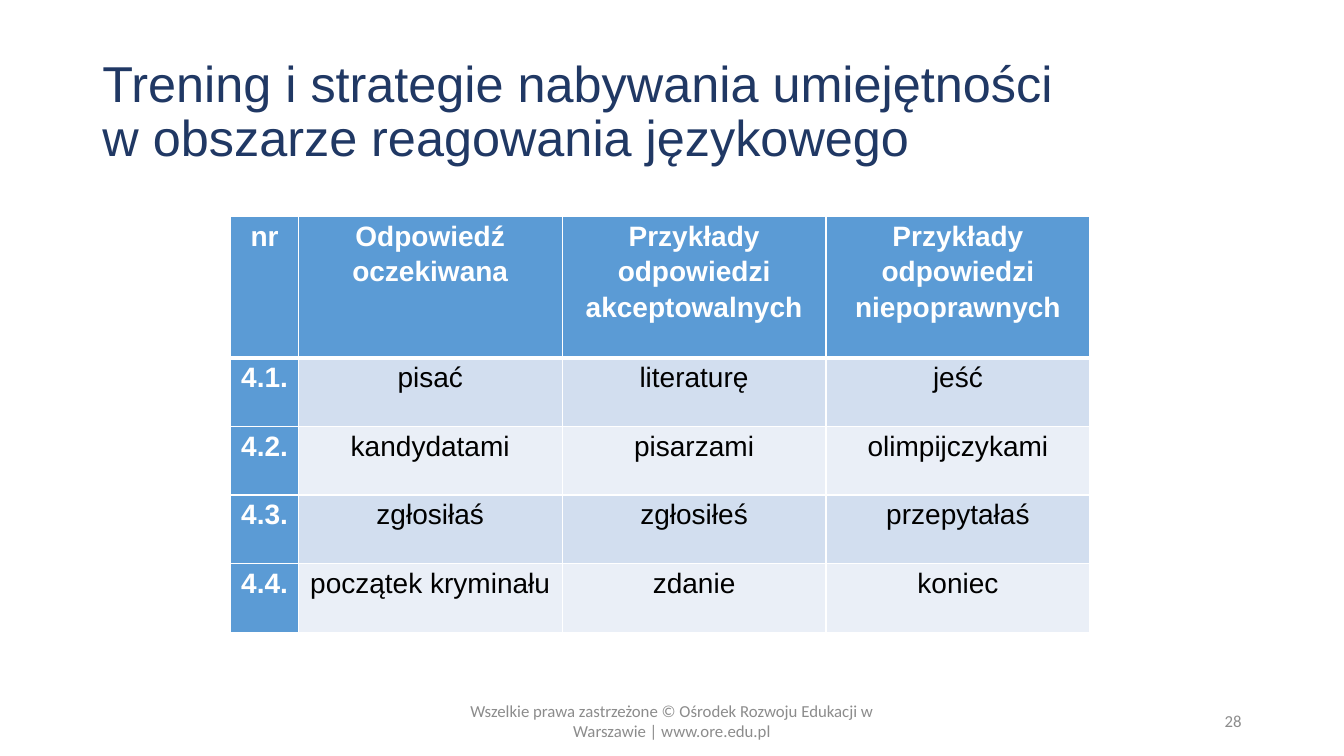
from lxml import etree
from pptx import Presentation
from pptx.dml.color import RGBColor
from pptx.enum.text import MSO_ANCHOR, PP_ALIGN
from pptx.oxml.ns import qn
from pptx.util import Pt

LEFT, MID, RIGHT = PP_ALIGN.LEFT, PP_ALIGN.CENTER, PP_ALIGN.RIGHT
CENTER = MSO_ANCHOR.MIDDLE
NAVY, BLUE, GRAY = "203864", "5B9BD5", "8C8C8C"
WHITE, BLACK = "FFFFFF", "000000"
BANDS = ("D2DEEF", "EAEFF7")
HEAD = ("nr", "Odpowiedź oczekiwana", "Przykłady odpowiedzi akceptowalnych",
        "Przykłady odpowiedzi niepoprawnych")
WORDS = (
    ("pisać", "literaturę", "jeść"),
    ("kandydatami", "pisarzami", "olimpijczykami"),
    ("zgłosiłaś", "zgłosiłeś", "przepytałaś"),
    ("początek kryminału", "zdanie", "koniec"),
)


def color(code):
    return RGBColor.from_string(code)


def write(frame, text, size=20, font="Arial", ink=BLACK, bold=False,
          align=LEFT, line=1.0):
    frame.word_wrap = True
    frame.text = text
    para = frame.paragraphs[0]
    para.alignment = align
    para.line_spacing = line
    for run in para.runs:
        run.font.size = Pt(size)
        run.font.name = font
        run.font.bold = bold
        run.font.color.rgb = color(ink)


class Deck:
    """Holds the style and the current slide."""

    def __init__(self):
        self.file = Presentation()
        self.file.slide_width, self.file.slide_height = Pt(960), Pt(540)
        self.slide = self.file.slides.add_slide(self.file.slide_layouts[5])

    def title(self, text, left, top, width, height):
        shape = self.slide.shapes.title
        shape.left, shape.top = Pt(left), Pt(top)
        shape.width, shape.height = Pt(width), Pt(height)
        shape.text_frame.vertical_anchor = CENTER
        write(shape.text_frame, text, size=36, ink=NAVY, line=0.9)

    def note(self, text, left, top, width, height, align):
        box = self.slide.shapes.add_textbox(Pt(left), Pt(top), Pt(width), Pt(height))
        box.text_frame.vertical_anchor = CENTER
        write(box.text_frame, text, size=12, font="Calibri", ink=GRAY, align=align)

    def edge(self, cell, side, width):
        props = cell._tc.get_or_add_tcPr()
        line = etree.SubElement(props, qn("a:" + side), w=str(Pt(width)))
        fill = etree.SubElement(line, qn("a:solidFill"))
        etree.SubElement(fill, qn("a:srgbClr"), val=WHITE)

    def cell(self, cell, text, row, col):
        key = row == 0 or col == 0
        cell.margin_left = cell.margin_right = Pt(5)
        cell.margin_top = cell.margin_bottom = 0
        write(cell.text_frame, text, ink=WHITE if key else BLACK, bold=key,
              align=MID, line=1.15)
        self.edge(cell, "lnL", 1)
        self.edge(cell, "lnR", 1)
        self.edge(cell, "lnT", 3 if row == 1 else 1)
        self.edge(cell, "lnB", 3 if row == 0 else 1)
        cell.fill.solid()
        cell.fill.fore_color.rgb = color(BLUE if key else BANDS[(row - 1) % 2])

    def table(self, rows, left, top, widths, heights):
        table = self.slide.shapes.add_table(
            len(rows), len(widths), Pt(left), Pt(top),
            Pt(sum(widths)), Pt(sum(heights))).table
        for col, width in zip(table.columns, widths):
            col.width = Pt(width)
        for row, height in zip(table.rows, heights):
            row.height = Pt(height)
        for i, row in enumerate(rows):
            for j, text in enumerate(row):
                self.cell(table.cell(i, j), text, i, j)


def main():
    deck = Deck()
    deck.title("Trening i strategie nabywania umiejętności\v"
               "w obszarze reagowania językowego", 66, 28.75, 828, 104.4)
    rows = [HEAD] + [(f"4.{n}.", *words) for n, words in enumerate(WORDS, 1)]
    deck.table(rows, 164.9, 154.3, [48.2] + [188.5] * 3, [101.3] + [49] * 4)
    deck.note("Wszelkie prawa zastrzeżone © Ośrodek Rozwoju Edukacji w Warszawie"
              " | www.ore.edu.pl", 318, 500.5, 324, 28.75, MID)
    deck.note("28", 678, 500.5, 216, 28.75, RIGHT)
    deck.file.save("out.pptx")


if __name__ == "__main__":
    main()
